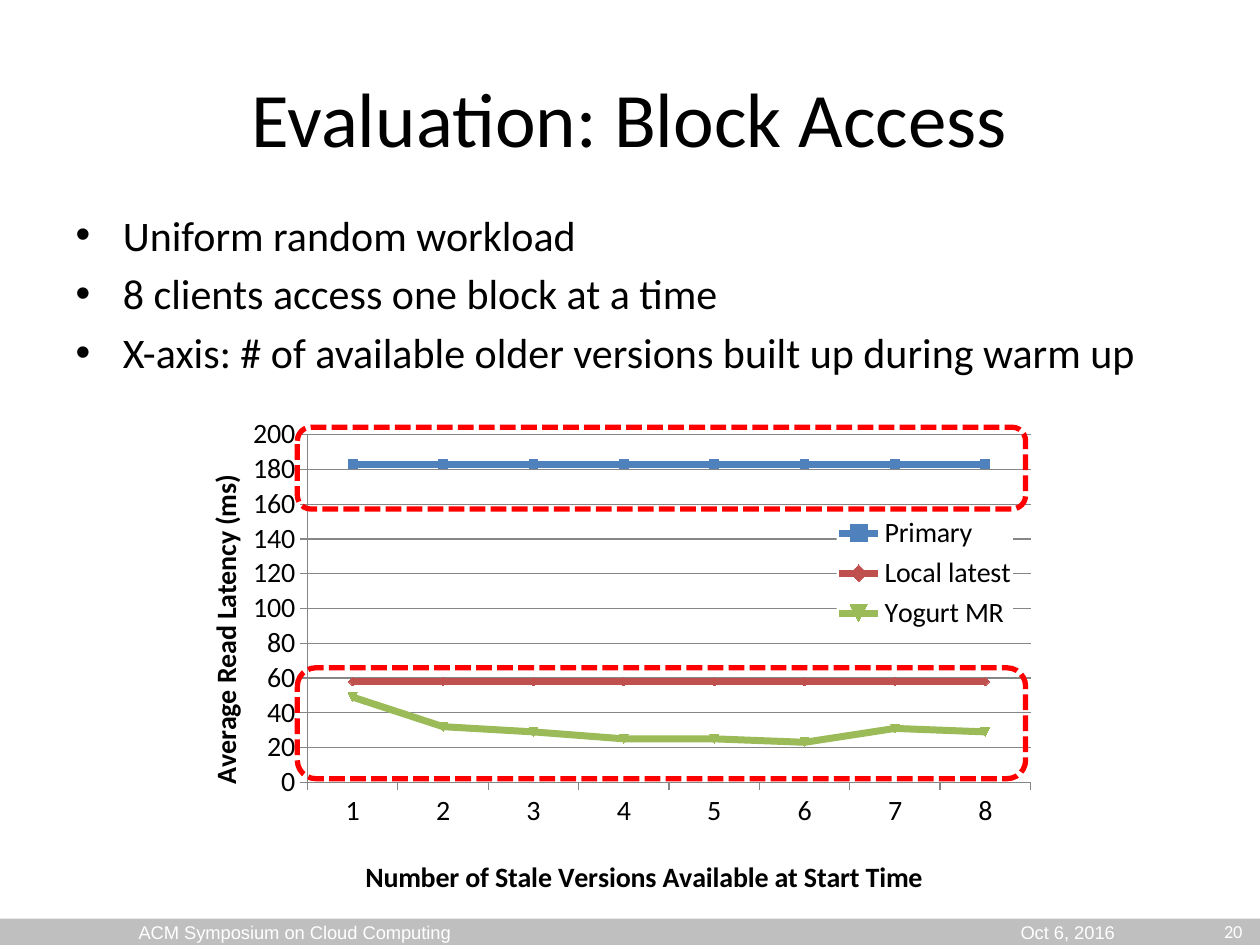
from dataclasses import dataclass

import pptx
import pptx.chart.data
import pptx.dml.color
import pptx.enum.chart
import pptx.enum.dml
import pptx.enum.shapes
import pptx.enum.text
import pptx.oxml
import pptx.oxml.ns
import pptx.util

Inches = pptx.util.Inches
Pt = pptx.util.Pt
Align = pptx.enum.text.PP_ALIGN
Anchor = pptx.enum.text.MSO_ANCHOR
Shape = pptx.enum.shapes.MSO_SHAPE


@dataclass(frozen=True)
class Theme:
    font: str = "Calibri"
    footer_font: str = "Arial"
    text: str = "000000"
    light: str = "FFFFFF"
    bar: str = "BFBFBF"
    grid: str = "868686"
    highlight: str = "FF0000"
    series: tuple = ("4F81BD", "C0504D", "9BBB59")
    title_size: float = 44
    body_size: float = 24
    chart_size: float = 16
    footer_size: float = 10.5


THEME = Theme()

LATENCIES = {
    "Primary": [183] * 8,
    "Local latest": [58] * 8,
    "Yogurt MR": [49, 32, 29, 25, 25, 23, 31, 29],
}


def color(value):
    return pptx.dml.color.RGBColor.from_string(value)


def style_font(font, size, value=THEME.text, name=THEME.font, bold=False):
    font.size = Pt(size)
    font.name = name
    font.bold = bold
    font.color.rgb = color(value)


def style_line(line, value, width):
    line.color.rgb = color(value)
    line.width = Pt(width)


def place(shape, box):
    shape.left, shape.top, shape.width, shape.height = map(Inches, box)


def add_heading(slide, box, text):
    shape = slide.shapes.title
    place(shape, box)
    shape.text_frame.text = text
    style_font(shape.text_frame.paragraphs[0].runs[0].font, THEME.title_size)


def add_bullets(slide, box, lines):
    shape = slide.placeholders[1]
    place(shape, box)
    shape.text_frame.text = "\n".join(lines)
    for paragraph in shape.text_frame.paragraphs:
        style_font(paragraph.runs[0].font, THEME.body_size)


def set_layout(element, index, x, y, width=None, height=None, inner=False):
    """Give a chart part a manual layout, in fractions of the chart."""
    for old in element.findall(pptx.oxml.ns.qn("c:layout")):
        element.remove(old)
    values = [("layoutTarget", "inner")] if inner else []
    values += [("xMode", "edge"), ("yMode", "edge"), ("x", x), ("y", y)]
    if width is not None:
        values += [("w", width), ("h", height)]
    parts = "".join(f'<c:{tag} val="{value}"/>' for tag, value in values)
    element.insert(index, pptx.oxml.parse_xml(
        f'<c:layout {pptx.oxml.ns.nsdecls("c")}>'
        f"<c:manualLayout>{parts}</c:manualLayout></c:layout>"))


def style_axis(axis, title, x, y):
    axis.major_tick_mark = pptx.enum.chart.XL_TICK_MARK.OUTSIDE
    axis.minor_tick_mark = pptx.enum.chart.XL_TICK_MARK.NONE
    style_line(axis.format.line, THEME.grid, 0.75)
    style_font(axis.tick_labels.font, THEME.chart_size)
    text_frame = axis.axis_title.text_frame
    text_frame.text = title
    style_font(text_frame.paragraphs[0].runs[0].font, THEME.chart_size, bold=True)
    set_layout(axis.axis_title._element, 1, x, y)


def style_legend(chart):
    chart.has_legend = True
    legend = chart.legend
    legend.position = pptx.enum.chart.XL_LEGEND_POSITION.RIGHT
    legend.include_in_layout = True
    style_font(legend.font, THEME.chart_size)
    set_layout(legend._element, 1, 0.76, 0.2, 0.2, 0.25)
    overlay = legend._element.find(pptx.oxml.ns.qn("c:overlay"))
    overlay.addnext(pptx.oxml.parse_xml(
        f'<c:spPr {pptx.oxml.ns.nsdecls("c", "a")}><a:solidFill>'
        f'<a:srgbClr val="{THEME.light}"/></a:solidFill></c:spPr>'))


def add_latency_chart(slide, box):
    data = pptx.chart.data.CategoryChartData()
    data.categories = [str(number) for number in range(1, 9)]
    for name, values in LATENCIES.items():
        data.add_series(name, values)
    chart = slide.shapes.add_chart(
        pptx.enum.chart.XL_CHART_TYPE.LINE_MARKERS, *map(Inches, box), data).chart
    chart.has_title = False
    style_font(chart.font, THEME.chart_size)
    chart.plots[0].vary_by_categories = False
    for series, value in zip(chart.plots[0].series, THEME.series):
        series.smooth = False
        style_line(series.format.line, value, 4)
        series.marker.format.fill.solid()
        series.marker.format.fill.fore_color.rgb = color(value)
    style_axis(chart.category_axis, "Number of Stale Versions Available at Start Time",
               0.22, 0.88)
    value_axis = chart.value_axis
    style_axis(value_axis, "Average Read Latency (ms)", 0.04, 0.12)
    value_axis.minimum_scale, value_axis.maximum_scale = 0, 200
    value_axis.major_unit = 20
    value_axis.has_major_gridlines = True
    style_line(value_axis.major_gridlines.format.line, THEME.grid, 0.75)
    style_legend(chart)
    set_layout(chart._chartSpace.chart.plotArea, 0, 0.16, 0.05, 0.82, 0.69, inner=True)


def add_highlight(slide, box):
    shape = slide.shapes.add_shape(Shape.ROUNDED_RECTANGLE, *map(Inches, box))
    shape.shadow.inherit = False
    shape.fill.background()
    style_line(shape.line, THEME.highlight, 3)
    shape.line.dash_style = pptx.enum.dml.MSO_LINE.SQUARE_DOT


def add_footer(slide, box, venue, date):
    """Draw the bar, with the date at a tab stop after the venue."""
    shape = slide.shapes.add_shape(Shape.RECTANGLE, *map(Inches, box))
    shape.shadow.inherit = False
    shape.fill.solid()
    shape.fill.fore_color.rgb = color(THEME.bar)
    shape.line.fill.background()
    text_frame = shape.text_frame
    text_frame.vertical_anchor = Anchor.MIDDLE
    text_frame.margin_left = Inches(1.1)
    text_frame.margin_top = text_frame.margin_bottom = 0
    text_frame.text = f"{venue}\t{date}"
    paragraph = text_frame.paragraphs[0]
    paragraph.alignment = Align.LEFT
    paragraph._p.get_or_add_pPr().append(pptx.oxml.parse_xml(
        f'<a:tabLst {pptx.oxml.ns.nsdecls("a")}>'
        f'<a:tab pos="{Inches(7)}" algn="l"/></a:tabLst>'))
    for run in paragraph.runs:
        style_font(run.font, THEME.footer_size, THEME.light, THEME.footer_font)


def add_page_number(slide, box, number):
    text_frame = slide.shapes.add_textbox(*map(Inches, box)).text_frame
    text_frame.word_wrap = True
    text_frame.vertical_anchor = Anchor.MIDDLE
    text_frame.text = str(number)
    paragraph = text_frame.paragraphs[0]
    paragraph.alignment = Align.RIGHT
    style_font(paragraph.runs[0].font, THEME.footer_size, THEME.light)


def main():
    presentation = pptx.Presentation()
    presentation.slide_width, presentation.slide_height = Inches(10), Inches(7.5)
    slide = presentation.slides.add_slide(presentation.slide_layouts[1])
    add_footer(slide, (0, 7.29, 10, 0.21), "ACM Symposium on Cloud Computing", "Oct 6, 2016")
    add_heading(slide, (0.5, 0.3, 9, 1.25), "Evaluation: Block Access")
    add_bullets(slide, (0.5, 1.61, 9, 4.95), [
        "Uniform random workload",
        "8 clients access one block at a time",
        "X-axis: # of available older versions built up during warm up",
    ])
    add_latency_chart(slide, (1.32, 3.25, 7, 4))
    add_page_number(slide, (7.63, 7.19, 2.33, 0.4), 20)
    for top, height in ((3.39, 0.65), (5.3, 0.88)):
        add_highlight(slide, (2.36, top, 5.78, height))
    presentation.save("out.pptx")


if __name__ == "__main__":
    main()
